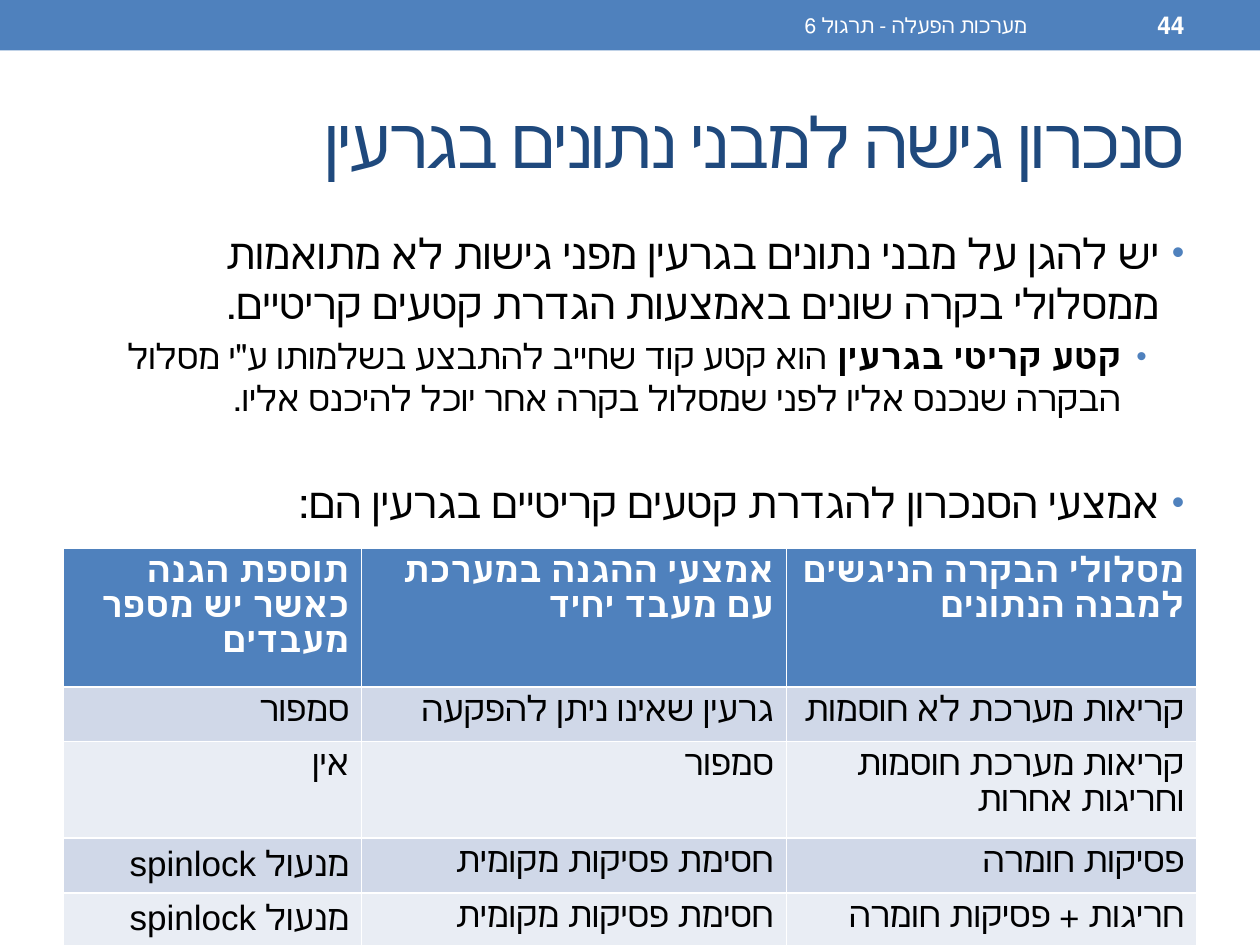
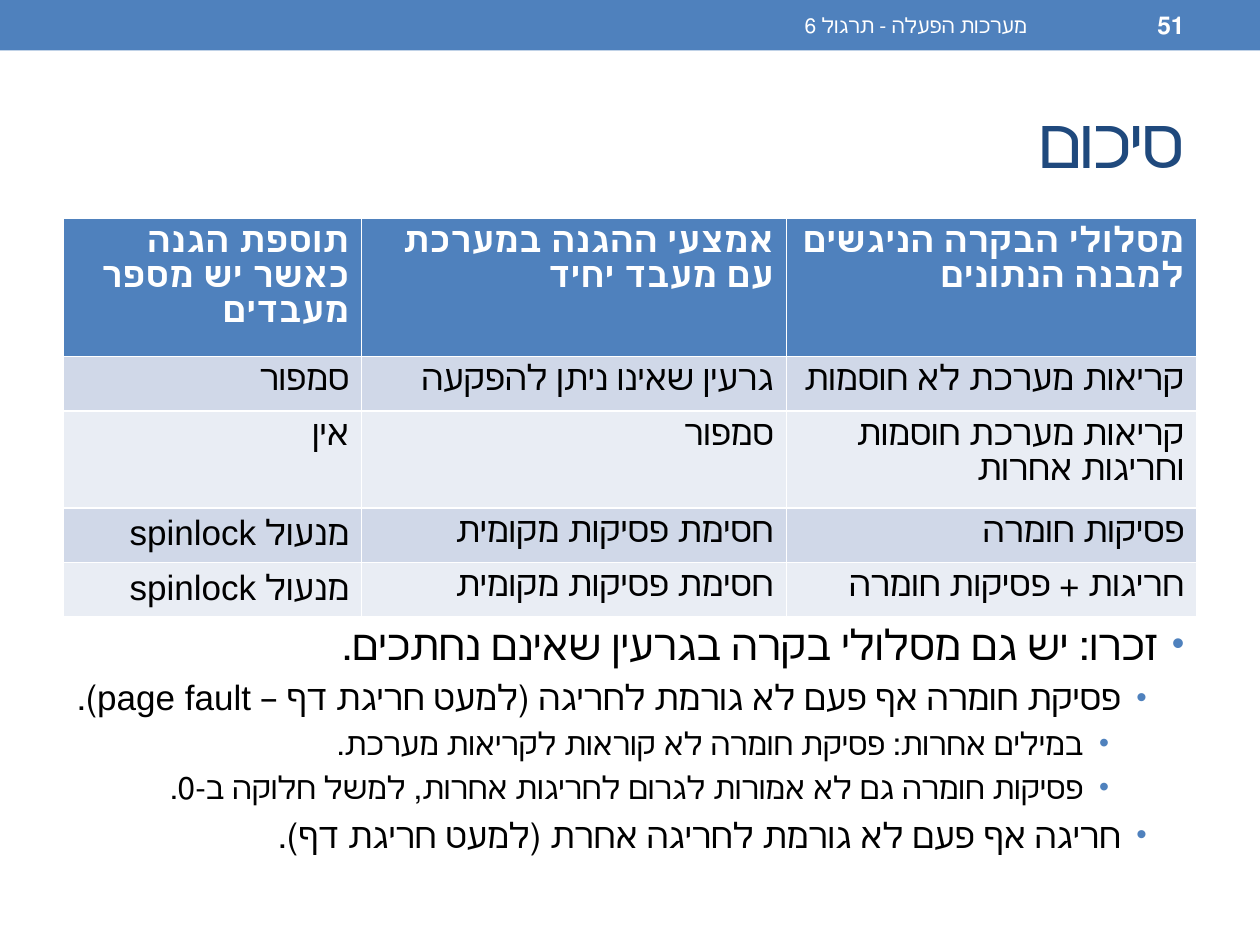
from lxml.etree import SubElement
from pptx import Presentation
from pptx.dml.color import RGBColor
from pptx.enum.shapes import MSO_SHAPE
from pptx.enum.text import MSO_ANCHOR, MSO_AUTO_SIZE, PP_ALIGN
from pptx.oxml.ns import qn
from pptx.util import Cm, Pt

FONT = "Arial"
BLUE, NAVY, WHITE, BLACK = "4F81BD", "1F497D", "FFFFFF", "000000"
ROW_FILLS = ["D0D8E8", "E9EDF4"]

COURSE = "מערכות הפעלה - תרגול 6"
PROTECTION_ROWS = [
    ("תוספת הגנה כאשר יש מספר מעבדים", "אמצעי ההגנה במערכת עם מעבד יחיד",
     "מסלולי הבקרה הניגשים למבנה הנתונים"),
    ("סמפור", "גרעין שאינו ניתן להפקעה", "קריאות מערכת לא חוסמות"),
    ("אין", "סמפור", "קריאות מערכת חוסמות\nוחריגות אחרות"),
    ("מנעול spinlock", "חסימת פסיקות מקומית", "פסיקות חומרה"),
    ("מנעול spinlock", "חסימת פסיקות מקומית", "חריגות + פסיקות חומרה"),
]

# Each bullet: level, bold lead, text, extra space before in points (None keeps the template's)
SLIDES = [
    {
        "number": "44",
        "title": "סנכרון גישה למבני נתונים בגרעין",
        "body_top": 4.45,
        "table_top": 11.05,
        "bullets": [
            (0, "", "יש להגן על מבני נתונים בגרעין מפני גישות לא מתואמות ממסלולי בקרה "
                    "שונים באמצעות הגדרת קטעים קריטיים.", None),
            (1, "קטע קריטי בגרעין ", "הוא קטע קוד שחייב להתבצע בשלמותו ע\"י מסלול הבקרה "
                                     "שנכנס אליו לפני שמסלול בקרה אחר יוכל להיכנס אליו.", None),
            (0, "", "אמצעי הסנכרון להגדרת קטעים קריטיים בגרעין הם:", 33),
        ],
    },
    {
        "number": "51",
        "title": "סיכום",
        "body_top": 12.34,
        "table_top": 4.39,
        "bullets": [
            (0, "", "זכרו: יש גם מסלולי בקרה בגרעין שאינם נחתכים.", None),
            (1, "", "פסיקת חומרה אף פעם לא גורמת לחריגה (למעט חריגת דף – page fault).", None),
            (2, "", "במילים אחרות: פסיקת חומרה לא קוראות לקריאות מערכת.", None),
            (2, "", "פסיקות חומרה גם לא אמורות לגרום לחריגות אחרות, למשל חלוקה ב-0.", None),
            (1, "", "חריגה אף פעם לא גורמת לחריגה אחרת (למעט חריגת דף).", None),
        ],
    },
]

LEFT, WIDTH, BODY_BOTTOM = 1.27, 22.86, 17.99
COLUMN_WIDTHS = [6.02, 8.56, 8.28]
ROW_HEIGHTS = [1.93, 1.09, 1.93, 1.09, 1.09]
LEVELS = [
    {"size": 24, "margin": 0.51, "bullet_percent": 85},
    {"size": 20, "margin": 1.27, "bullet_percent": 85},
    {"size": 18, "margin": 2.03, "bullet_percent": 90},
]
HANGING = 0.51


def color(hex_text):
    return RGBColor.from_string(hex_text)


def place(shape, left, top, width, height):
    box = {"left": left, "top": top, "width": width, "height": height}
    for name, value in box.items():
        setattr(shape, name, Cm(value))


def add_run(paragraph, text, size, text_color, bold=False):
    run = paragraph.add_run()
    run.text = text
    for name, value in {"name": FONT, "size": Pt(size), "bold": bold}.items():
        setattr(run.font, name, value)
    run.font.color.rgb = color(text_color)
    return run


def set_right_to_left(paragraph):
    paragraph.alignment = PP_ALIGN.RIGHT
    properties = paragraph._p.get_or_add_pPr()
    properties.set("rtl", "1")
    return properties


def write_lines(frame, text, *style):
    """Write one right-to-left paragraph for each line of text."""
    for index, line in enumerate(text.split("\n")):
        paragraph = frame.add_paragraph() if index else frame.paragraphs[0]
        set_right_to_left(paragraph)
        add_run(paragraph, line, *style)


def add_header(slide, number):
    band = slide.shapes.add_shape(MSO_SHAPE.RECTANGLE, 0, 0, Cm(25.4), Cm(1.02))
    band.shadow.inherit = False
    band.fill.solid()
    band.fill.fore_color.rgb = color(BLUE)
    band.line.fill.background()
    for left, width, text, size, bold in [(9.53, 11.43, COURSE, 12, False),
                                          (21.16, 2.97, number, 14, True)]:
        label = slide.shapes.add_textbox(Cm(left), Cm(0.05), Cm(width), Cm(0.91))
        frame = label.text_frame
        frame.word_wrap = True
        frame.vertical_anchor = MSO_ANCHOR.MIDDLE
        write_lines(frame, text, size, WHITE, bold)


def fill_title(title, text):
    place(title, LEFT, 1.47, WIDTH, 2.74)
    title.text_frame.auto_size = MSO_AUTO_SIZE.NONE
    title.text_frame.vertical_anchor = MSO_ANCHOR.MIDDLE
    write_lines(title.text_frame, text, 40, NAVY)
    run = title.text_frame.paragraphs[0].runs[0]
    run.font._element.set("spc", "-100")


def format_bullet(paragraph, level):
    properties = set_right_to_left(paragraph)
    properties.set("marL", str(Cm(level["margin"])))
    properties.set("indent", str(-Cm(HANGING)))
    bullet_color = SubElement(properties, qn("a:buClr"))
    SubElement(bullet_color, qn("a:srgbClr"), val=BLUE)
    SubElement(properties, qn("a:buSzPct"), val=str(level["bullet_percent"] * 1000))
    SubElement(properties, qn("a:buFont"), typeface=FONT)
    SubElement(properties, qn("a:buChar"), char="•")


def fill_body(body, top, bullets):
    place(body, LEFT, top, WIDTH, BODY_BOTTOM - top)
    frame = body.text_frame
    frame.auto_size = MSO_AUTO_SIZE.NONE
    for index, (depth, lead, text, space_before) in enumerate(bullets):
        paragraph = frame.add_paragraph() if index else frame.paragraphs[0]
        paragraph.level = depth
        level = LEVELS[depth]
        format_bullet(paragraph, level)
        if space_before:
            paragraph.space_before = Pt(space_before)
        if lead:
            add_run(paragraph, lead, level["size"], BLACK, True)
        add_run(paragraph, text, level["size"], BLACK)


def add_protection_table(slide, top):
    table = slide.shapes.add_table(len(PROTECTION_ROWS), len(COLUMN_WIDTHS), Cm(LEFT), Cm(top),
                                   Cm(WIDTH), Cm(sum(ROW_HEIGHTS))).table
    for column, width in zip(table.columns, COLUMN_WIDTHS):
        column.width = Cm(width)
    for row_index, (row, height) in enumerate(zip(table.rows, ROW_HEIGHTS)):
        row.height = Cm(height)
        is_header = row_index == 0
        row_fill = BLUE if is_header else ROW_FILLS[(row_index - 1) % 2]
        for cell, text in zip(row.cells, PROTECTION_ROWS[row_index]):
            cell.fill.solid()
            cell.fill.fore_color.rgb = color(row_fill)
            write_lines(cell.text_frame, text, 20, WHITE if is_header else BLACK, is_header)


def main():
    presentation = Presentation()
    presentation.slide_width, presentation.slide_height = Cm(25.4), Cm(19.05)
    for content in SLIDES:
        slide = presentation.slides.add_slide(presentation.slide_layouts[1])
        fill_title(slide.shapes.title, content["title"])
        fill_body(slide.placeholders[1], content["body_top"], content["bullets"])
        add_header(slide, content["number"])
        add_protection_table(slide, content["table_top"])
    presentation.save("out.pptx")


if __name__ == "__main__":
    main()
